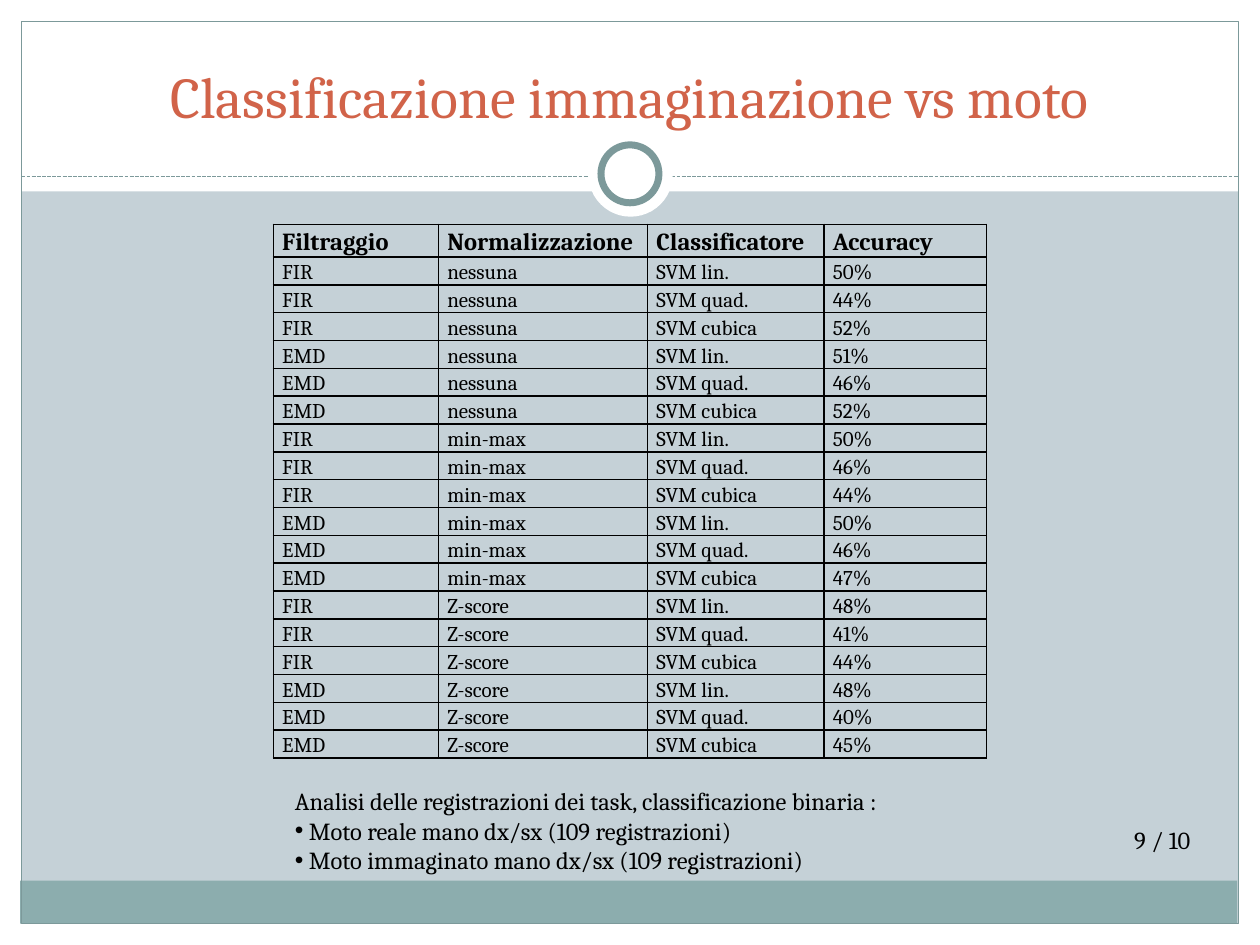
import itertools

import lxml.etree
import pptx
import pptx.dml.color
import pptx.enum.dml
import pptx.enum.shapes
import pptx.enum.text
import pptx.oxml
import pptx.oxml.ns
import pptx.util

Inches, Pt = pptx.util.Inches, pptx.util.Pt
SHAPE = pptx.enum.shapes.MSO_SHAPE
ALIGN = pptx.enum.text.PP_ALIGN
ANCHOR = pptx.enum.text.MSO_ANCHOR
WHITE, TEAL, BLACK = "FFFFFF", "7C999A", "000000"


def color(hex_string):
    return pptx.dml.color.RGBColor.from_string(hex_string)


def write(paragraph, text, size, hex_string=BLACK, bold=False, **layout):
    run = paragraph.add_run()
    run.text = text
    for name, value in {"size": Pt(size), "name": "Cambria", "bold": bold}.items():
        setattr(run.font, name, value)
    run.font.color.rgb = color(hex_string)
    for name, value in layout.items():
        setattr(paragraph, name, value)


presentation = pptx.Presentation()
presentation.slide_width = Inches(10)
presentation.slide_height = Inches(7.5)
slide = presentation.slides.add_slide(presentation.slide_layouts[1])
slide.background.fill.solid()
slide.background.fill.fore_color.rgb = color("C5D1D7")
title, notes = slide.placeholders

# White margins, footer band and thin frame
decorations = [
    (SHAPE.RECTANGLE, 0, 7.33, 10, 0.17, WHITE, None),
    (SHAPE.RECTANGLE, 0, 0, 10, 1.52, WHITE, None),
    (SHAPE.RECTANGLE, 0, 0, 0.17, 7.5, WHITE, None),
    (SHAPE.RECTANGLE, 9.83, 0, 0.17, 7.5, WHITE, None),
    (SHAPE.RECTANGLE, 0.16, 6.99, 9.66, 0.34, "8CADAE", None),
    (SHAPE.RECTANGLE, 0.17, 0.17, 9.66, 7.16, None, 0.75),
    (SHAPE.OVAL, 4.67, 1.05, 0.67, 0.67, WHITE, None),
    (SHAPE.OVAL, 4.77, 1.15, 0.46, 0.46, WHITE, 4),
]
for kind, left, top, width, height, fill, line_width in decorations:
    # The dashed rule lies just below the discs
    if kind == SHAPE.OVAL and line_width is None:
        rule = slide.shapes.add_connector(
            pptx.enum.shapes.MSO_CONNECTOR.STRAIGHT,
            Inches(0.17), Inches(1.4), Inches(9.83), Inches(1.4))
        rule.line.color.rgb = color(TEAL)
        rule.line.width = Pt(0.75)
        rule.line.dash_style = pptx.enum.dml.MSO_LINE.SQUARE_DOT
        lxml.etree.SubElement(rule._element.spPr, pptx.oxml.ns.qn("a:effectLst"))
    decoration = slide.shapes.add_shape(
        kind, Inches(left), Inches(top), Inches(width), Inches(height))
    decoration.shadow.inherit = False
    if fill:
        decoration.fill.solid()
        decoration.fill.fore_color.rgb = color(fill)
    else:
        decoration.fill.background()
    if line_width:
        decoration.line.color.rgb = color(TEAL)
        decoration.line.width = Pt(line_width)
    else:
        decoration.line.fill.background()

# Title, brought in front of the white band
slide.shapes._spTree.append(title._element)
for name, value in {"left": 0.33, "top": 0.25, "width": 9.33, "height": 0.83}.items():
    setattr(title, name, Inches(value))
title.text_frame.vertical_anchor = ANCHOR.BOTTOM
write(title.text_frame.paragraphs[0], "Classificazione immaginazione vs moto", 33,
      "D16349", alignment=ALIGN.CENTER)

# Results: every normalisation, filter and classifier combination
header = ["Filtraggio", "Normalizzazione", "Classificatore", "Accuracy"]
combinations = itertools.product(
    ["nessuna", "min-max", "Z-score"], ["FIR", "EMD"],
    ["SVM lin.", "SVM quad.", "SVM cubica"])
accuracies = [50, 44, 52, 51, 46, 52, 50, 46, 44, 50, 46, 47, 48, 41, 44, 48, 40, 45]
rows = [header] + [
    [filtering, normalization, classifier, f"{accuracy}%"]
    for (normalization, filtering, classifier), accuracy in zip(combinations, accuracies)]

results = slide.shapes.add_table(
    len(rows), len(header), Inches(2.17), Inches(1.78), Inches(5.66), Inches(4.22)).table
results.first_row = results.horz_banding = False
for column, width in zip(results.columns, [1.31, 1.66, 1.4, 1.29]):
    column.width = Inches(width)
cell_format = {"margin_left": Inches(0.07), "margin_right": Inches(0.07),
               "margin_top": 0, "margin_bottom": 0}
for row_index, values in enumerate(rows):
    is_header = row_index == 0
    results.rows[row_index].height = Inches(0.26 if is_header else 0.22)
    for column_index, value in enumerate(values):
        cell = results.cell(row_index, column_index)
        for name, setting in cell_format.items():
            setattr(cell, name, setting)
        cell.vertical_anchor = ANCHOR.TOP if is_header else ANCHOR.MIDDLE
        write(cell.text_frame.paragraphs[0], value, 14 if is_header else 12,
              bold=is_header, line_spacing=1.15,
              alignment=ALIGN.JUSTIFY if is_header else ALIGN.LEFT)
        for side in ("lnL", "lnR", "lnT", "lnB"):
            cell._tc.get_or_add_tcPr().append(pptx.oxml.parse_xml(
                f'<a:{side} {pptx.oxml.ns.nsdecls("a")} w="12700"><a:solidFill>'
                f'<a:srgbClr val="{BLACK}"/></a:solidFill></a:{side}>'))
        cell.fill.background()

# Page number
page_number = slide.shapes.add_textbox(
    Inches(8.78), Inches(6.43), Inches(0.89), Inches(0.47)).text_frame
page_format = {"word_wrap": True, "vertical_anchor": ANCHOR.MIDDLE,
               "margin_left": Inches(0.05), "margin_right": Inches(0.05),
               "margin_top": Inches(0.05), "margin_bottom": Inches(0.05)}
for name, value in page_format.items():
    setattr(page_number, name, value)
write(page_number.paragraphs[0], "9 / 10", 14, alignment=ALIGN.CENTER)

# Notes on the recordings
slide.shapes._spTree.append(notes._element)
for name, value in {"left": 2.24, "top": 6.19, "width": 8.15, "height": 0.81}.items():
    setattr(notes, name, Inches(value))
notes.text_frame.auto_size = pptx.enum.text.MSO_AUTO_SIZE.SHAPE_TO_FIT_TEXT
recordings = [
    ("Analisi delle registrazioni dei task, classificazione binaria :", False),
    (" Moto reale mano dx/sx (109 registrazioni)", True),
    (" Moto immaginato mano dx/sx (109 registrazioni)", True),
]
for index, (text, bulleted) in enumerate(recordings):
    paragraph = notes.text_frame.add_paragraph() if index else notes.text_frame.paragraphs[0]
    write(paragraph, text, 14, space_before=Pt(0), alignment=ALIGN.LEFT)
    properties = paragraph._p.get_or_add_pPr()
    properties.set("marL", "0")
    properties.set("indent", "0")
    if bulleted:
        font = lxml.etree.SubElement(properties, pptx.oxml.ns.qn("a:buFont"))
        font.set("typeface", "Arial")
        bullet = lxml.etree.SubElement(properties, pptx.oxml.ns.qn("a:buChar"))
        bullet.set("char", "•")
    else:
        lxml.etree.SubElement(properties, pptx.oxml.ns.qn("a:buNone"))

presentation.save("out.pptx")
